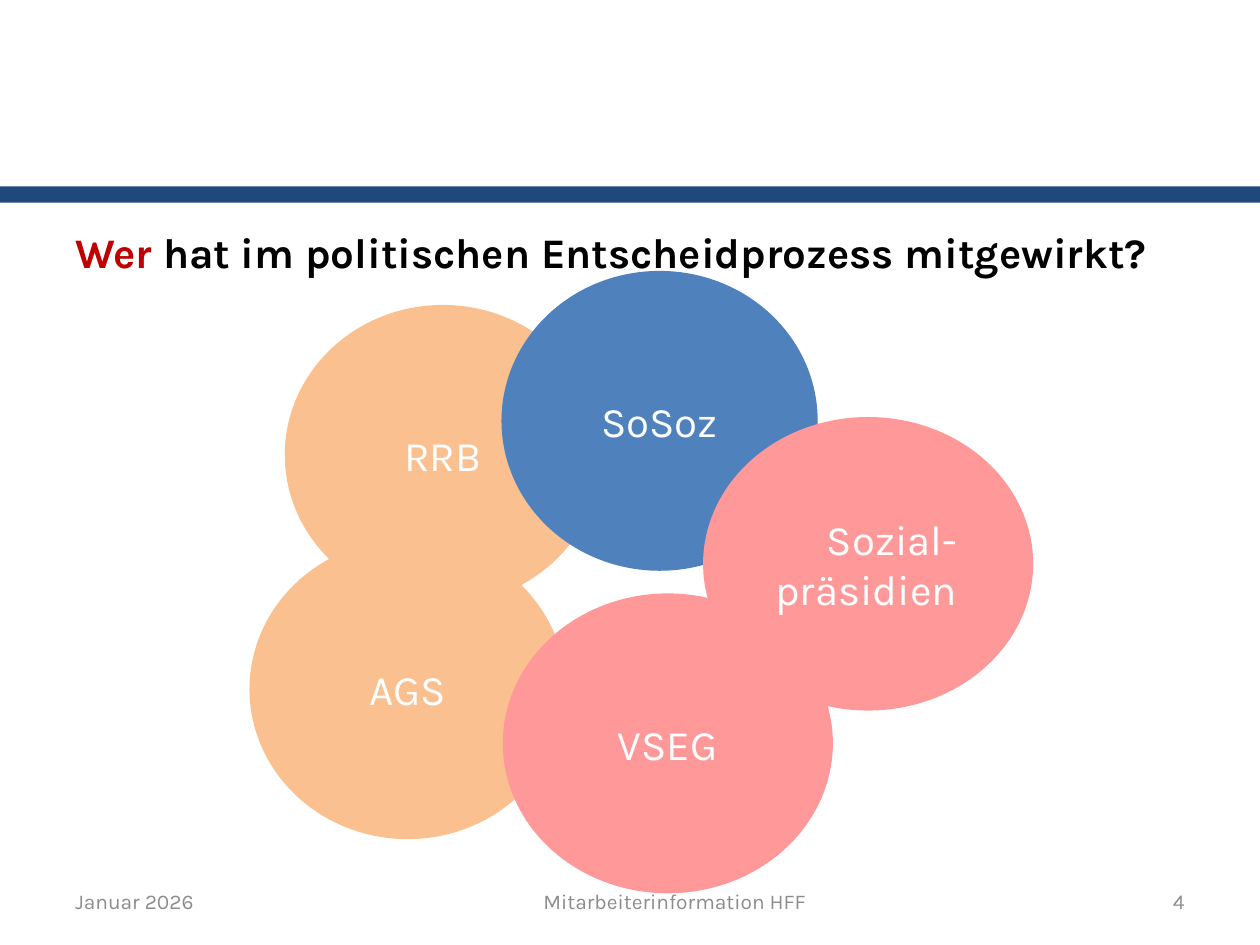
"""Build the slide on who took part in the political decision."""
import dataclasses

import pptx
import pptx.dml.color
import pptx.enum.shapes
import pptx.enum.text
import pptx.util

PX = 9144
FONT = "Karla"
SHAPE = pptx.enum.shapes.MSO_SHAPE
ALIGN = pptx.enum.text.PP_ALIGN
ANCHOR = pptx.enum.text.MSO_ANCHOR


@dataclasses.dataclass
class Box:
    x: int
    y: int
    w: int
    h: int

    def emu(self) -> list[int]:
        return [n * PX for n in dataclasses.astuple(self)]


@dataclasses.dataclass
class Group:
    name: str
    box: Box
    fill: str
    align: ALIGN = ALIGN.CENTER
    inset: int = 10


@dataclasses.dataclass
class Foot:
    text: str
    box: Box
    align: ALIGN


ORANGE, BLUE, PINK = "FAC090", "4F81BD", "FF9999"
GROUPS = [
    Group("RRB", Box(226, 242, 251, 238), ORANGE),
    Group("AGS", Box(198, 428, 251, 238), ORANGE),
    Group("SoSoz", Box(398, 215, 251, 238), BLUE),
    Group("Sozial-\vpräsidien", Box(558, 331, 262, 233), PINK, ALIGN.RIGHT, 22),
    Group("VSEG", Box(399, 471, 262, 238), PINK),
]
FEET = [
    Foot("Januar 2026", Box(50, 695, 233, 40), ALIGN.LEFT),
    Foot("Mitarbeiterinformation HFF", Box(342, 695, 387, 40), ALIGN.CENTER),
    Foot("4", Box(717, 695, 233, 40), ALIGN.RIGHT),
]


def rgb(hue: str) -> pptx.dml.color.RGBColor:
    return pptx.dml.color.RGBColor.from_string(hue)


def write(shape, text: str, *, hues=("FFFFFF",), size: int = 24, bold: bool = False,
          align: ALIGN = ALIGN.CENTER, anchor: ANCHOR = ANCHOR.MIDDLE,
          inset: int = 10) -> None:
    """Write text in a shape, with one hue for each part split at a bar."""
    frame = shape.text_frame
    frame.word_wrap = True
    frame.auto_size = pptx.enum.text.MSO_AUTO_SIZE.NONE
    frame.vertical_anchor = anchor
    frame.margin_right = inset * PX
    para = frame.paragraphs[0]
    para.alignment = align
    parts = text.split("|")
    para.text = parts[0]
    for part in parts[1:]:
        para.add_run().text = part
    for i, run in enumerate(para.runs):
        font = run.font
        font.name, font.size, font.bold = FONT, pptx.util.Pt(size), bold
        font.color.rgb = rgb(hues[min(i, len(hues) - 1)])


def draw(slide, kind: SHAPE, box: Box, fill: str):
    shape = slide.shapes.add_shape(kind, *box.emu())
    shape.shadow.inherit = False
    shape.fill.solid()
    shape.fill.fore_color.rgb = rgb(fill)
    shape.line.fill.background()
    return shape


def main() -> None:
    deck = pptx.Presentation()
    deck.slide_width, deck.slide_height = 1000 * PX, 750 * PX
    slide = deck.slides.add_slide(deck.slide_layouts[5])

    title = slide.shapes.title
    title.left, title.top, title.width, title.height = Box(50, 175, 958, 520).emu()
    write(title, "Wer| hat im politischen Entscheidprozess mitgewirkt?",
          hues=("C00000", "000000"), bold=True, align=ALIGN.LEFT, anchor=ANCHOR.TOP)

    for foot in FEET:
        write(slide.shapes.add_textbox(*foot.box.emu()), foot.text,
              hues=("8C8C8C",), size=12, align=foot.align)

    draw(slide, SHAPE.RECTANGLE, Box(0, 148, 1000, 13), "1F497D")
    for group in GROUPS:
        disc = draw(slide, SHAPE.FLOWCHART_CONNECTOR, group.box, group.fill)
        write(disc, group.name, align=group.align, inset=group.inset)

    deck.save("out.pptx")


if __name__ == "__main__":
    main()
